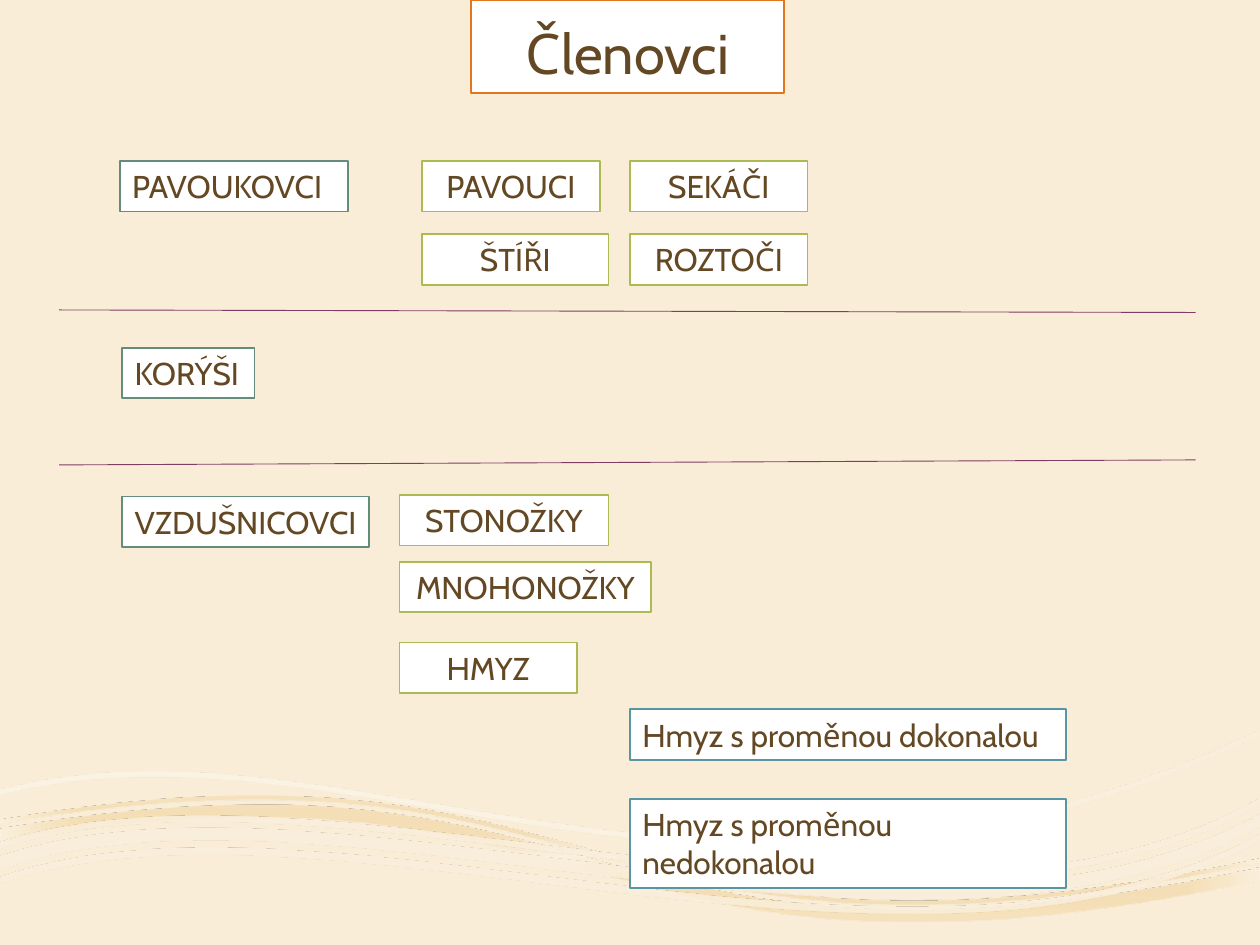
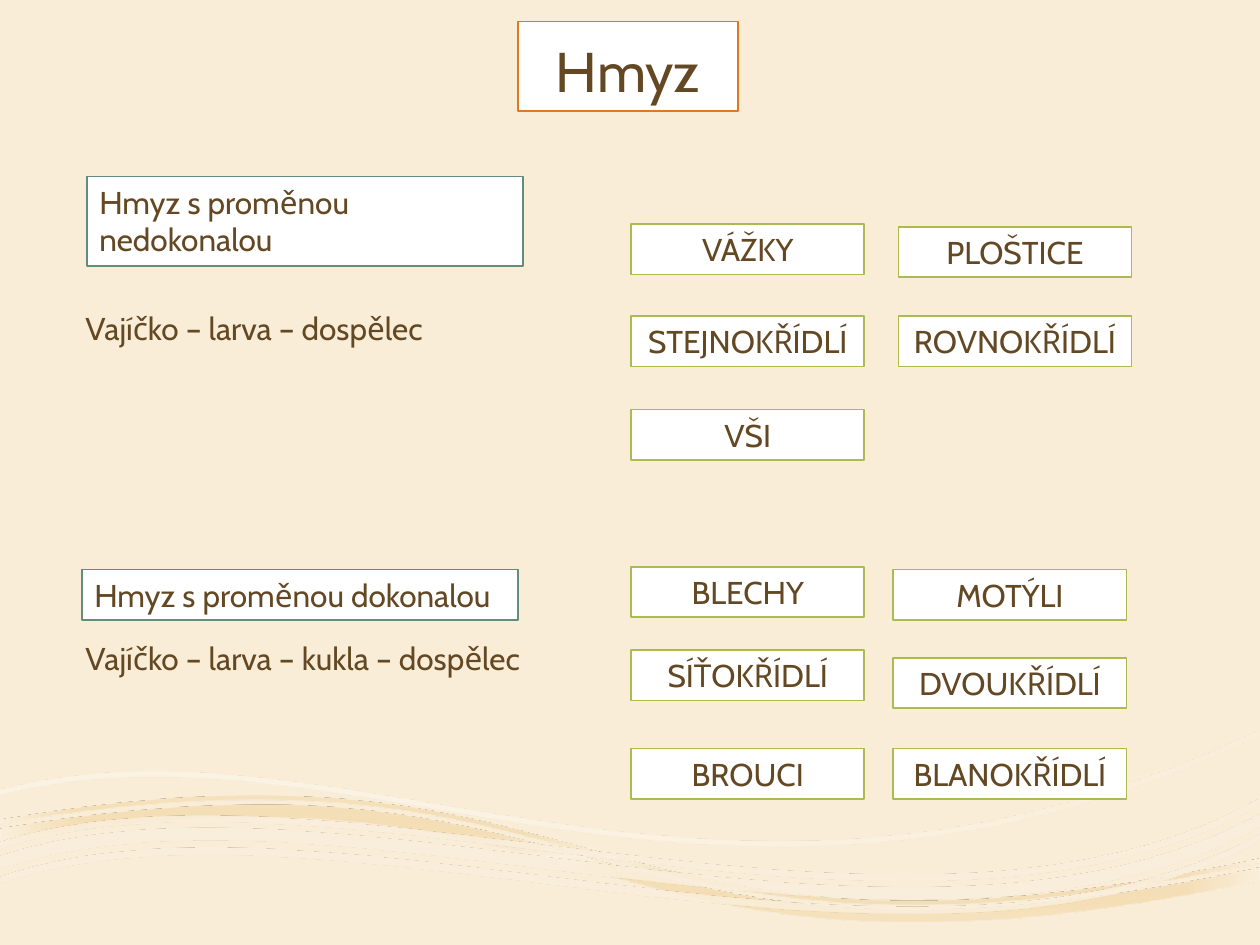
from math import cos, radians, sin

from lxml import etree
from pptx import Presentation
from pptx.dml.color import RGBColor
from pptx.enum.shapes import MSO_CONNECTOR, MSO_SHAPE
from pptx.enum.text import MSO_ANCHOR, MSO_AUTO_SIZE, PP_ALIGN
from pptx.oxml import parse_xml
from pptx.oxml.ns import nsdecls, qn
from pptx.util import Inches, Pt

RECTANGLE = MSO_SHAPE.RECTANGLE
STRAIGHT = MSO_CONNECTOR.STRAIGHT
LEFT, CENTER = PP_ALIGN.LEFT, PP_ALIGN.CENTER
TOP, BOTTOM = MSO_ANCHOR.TOP, MSO_ANCHOR.BOTTOM
GROW, FIXED = MSO_AUTO_SIZE.SHAPE_TO_FIT_TEXT, MSO_AUTO_SIZE.NONE

CREAM = RGBColor(0xF9, 0xED, 0xD7)
WHITE = RGBColor(0xFF, 0xFF, 0xFF)
BROWN = RGBColor(0x63, 0x48, 0x23)
ORANGE = RGBColor(0xE1, 0x77, 0x1F)
TEAL = RGBColor(0x64, 0x8C, 0x7A)
GREEN = RGBColor(0xAC, 0xBB, 0x51)
BLUE = RGBColor(0x5A, 0x95, 0xA4)
PLUM = RGBColor(0x80, 0x3C, 0x63)
PALE_SAND = RGBColor(0xFA, 0xF1, 0xDF)
SAND = RGBColor(0xF4, 0xDE, 0xB7)
DEEP_SAND = RGBColor(0xF4, 0xDD, 0xB3)
LIGHT_CREAM = RGBColor(0xFA, 0xEF, 0xDC)

FONT = "Cabin"
LINE_HEIGHT = 0.4
TWO_LINE_HEIGHT = 0.71
WAVE_TILT = 3.5

COMPLETE = "Hmyz s proměnou dokonalou"
INCOMPLETE = "Hmyz s proměnou nedokonalou"

SLIDES = [
    {
        "title": ("Členovci", 3.74, 0, 2.48, 0.74),
        "boxes": [
            (TEAL, LEFT, [
                ("KORÝŠI", 0.97, 2.76, 1.05),
                ("VZDUŠNICOVCI", 0.97, 3.94, 1.96),
                ("PAVOUKOVCI", 0.95, 1.28, 1.81),
            ]),
            (GREEN, CENTER, [
                ("PAVOUCI", 3.35, 1.28, 1.41),
                ("STONOŽKY", 3.17, 3.93, 1.66),
                ("MNOHONOŽKY", 3.17, 4.46, 2),
                ("HMYZ", 3.17, 5.1, 1.41),
                ("ROZTOČI", 5, 1.86, 1.41),
                ("SEKÁČI", 5, 1.28, 1.41),
                ("ŠTÍŘI", 3.35, 1.86, 1.48),
            ]),
            (BLUE, LEFT, [
                (COMPLETE, 5, 5.63, 3.46),
                (INCOMPLETE, 5, 6.34, 3.46),
            ]),
        ],
        "stages": [],
        "dividers": [(0.47, 2.46, 9.49, 2.48), (0.47, 3.69, 9.49, 3.65)],
    },
    {
        "title": ("Hmyz", 4.11, 0.17, 1.75, 0.71),
        "boxes": [
            (TEAL, LEFT, [
                (COMPLETE, 0.65, 4.52, 3.46),
                (INCOMPLETE, 0.69, 1.4, 3.46),
            ]),
            (GREEN, CENTER, [
                (order, left, top, 1.85)
                for left, orders in [
                    (5.01, [("VÁŽKY", 1.78), ("STEJNOKŘÍDLÍ", 2.51), ("VŠI", 3.25),
                            ("BLECHY", 4.5), ("SÍŤOKŘÍDLÍ", 5.16), ("BROUCI", 5.94)]),
                    (7.13, [("PLOŠTICE", 1.8), ("ROVNOKŘÍDLÍ", 2.51)]),
                    (7.09, [("MOTÝLI", 4.52), ("DVOUKŘÍDLÍ", 5.22), ("BLANOKŘÍDLÍ", 5.94)]),
                ]
                for order, top in orders
            ]),
        ],
        "stages": [
            ("Vajíčko – larva – dospělec", 0.58, 2.4, 3.53),
            ("Vajíčko – larva – kukla – dospělec", 0.58, 5.02, 3.68),
        ],
        "dividers": [],
    },
]

WAVES = [
    {
        "frame": (0.01, 6.12, 9.98, 1.35),
        "contours": [
            [(2.28, 6.39), (5.02, 6.47, 5.55, 7.83, 10, 6.88), (10.01, 6.98),
             (4.54, 8.14, 4.99, 5.83, -0.01, 6.68), (-0.01, 6.58),
             (0.92, 6.42, 1.66, 6.38, 2.28, 6.39)],
            [(2.28, 6.32), (5.02, 6.4, 5.55, 7.76, 10, 6.81), (10, 6.84),
             (4.53, 8.01, 4.99, 5.69, -0.01, 6.54), (-0.01, 6.51),
             (0.92, 6.35, 1.66, 6.3, 2.28, 6.32)],
        ],
        "stops": [(0, PALE_SAND, 90), (18, SAND, 100), (37, DEEP_SAND, 90), (100, PALE_SAND, 100)],
        "direction": '<a:path path="shape"><a:fillToRect l="50000" t="50000" r="50000" b="50000"/></a:path>',
    },
    {
        "frame": (0.02, 5.88, 10.01, 1.71),
        "contours": [
            [(10.06, 7.23), (10.06, 7.23), (10.06, 7.27), (10.06, 7.27)],
            [(9.99, 5.8), (9.99, 5.84), (5.67, 7.89, 2.78, 5.58, -0.01, 6.31), (-0.01, 6.27),
             (2.78, 5.54, 5.67, 7.85, 9.99, 5.8)],
        ],
        "stops": [(36, WHITE, 30), (100, CREAM, 48)],
        "direction": '<a:lin ang="2700000" scaled="0"/>',
    },
    {
        "frame": (0, 6.25, 10.02, 1.15),
        "contours": [
            [(10, 6.62), (10, 6.67), (7.19, 8.2, 2.6, 6.13, 0, 7.01), (0, 6.96),
             (2.6, 6.07, 7.19, 8.14, 10, 6.62)],
            [(10, 6.46), (10, 6.56), (7.19, 8.08, 2.6, 6.01, 0, 6.9), (-0.01, 6.8),
             (2.6, 5.92, 7.18, 7.99, 10, 6.46)],
            [(9.99, 6.34), (10, 6.39), (7.2, 7.95, 2.62, 5.88, -0.01, 6.74), (-0.01, 6.69),
             (2.62, 5.84, 7.2, 7.9, 9.99, 6.34)],
        ],
        "stops": [(36, WHITE, 47), (100, LIGHT_CREAM, 82)],
        "direction": '<a:path path="rect"><a:fillToRect l="100000" t="100000"/></a:path>',
    },
]


def wave_outline(contours, left, top, width, height):
    cosine, sine = cos(radians(WAVE_TILT)), sin(radians(WAVE_TILT))

    def point_xml(x, y):
        across, down = x - left - width / 2, y - top - height / 2
        local_x = Inches(across * cosine - down * sine + width / 2)
        local_y = Inches(across * sine + down * cosine + height / 2)
        return f'<a:pt x="{local_x}" y="{local_y}"/>'

    commands = ""
    for contour in contours:
        for index, segment in enumerate(contour):
            tag = "moveTo" if index == 0 else "lnTo" if len(segment) == 2 else "cubicBezTo"
            points = "".join(point_xml(*pair) for pair in zip(segment[::2], segment[1::2]))
            commands += f"<a:{tag}>{points}</a:{tag}>"
        commands += "<a:close/>"
    return parse_xml(f'<a:pathLst {nsdecls("a")}><a:path w="{Inches(width)}" h="{Inches(height)}">'
                     f'{commands}</a:path></a:pathLst>')


def gradient_fill(stops, direction):
    stop_xml = "".join(
        f'<a:gs pos="{position * 1000}"><a:srgbClr val="{color}">'
        f'<a:alpha val="{opacity * 1000}"/></a:srgbClr></a:gs>'
        for position, color, opacity in stops)
    return parse_xml(f'<a:gradFill {nsdecls("a")} rotWithShape="1">'
                     f'<a:gsLst>{stop_xml}</a:gsLst>{direction}</a:gradFill>')


def place(shape, *bounds):
    shape.left, shape.top, shape.width, shape.height = map(Inches, bounds)


def decorate_layout(layout, slide):
    layout.background.fill.solid()
    layout.background.fill.fore_color.rgb = CREAM
    for index, wave in enumerate(WAVES):
        builder = slide.shapes.build_freeform()
        builder.add_line_segments([(Inches(1), Inches(1))])
        shape = builder.convert_to_shape()
        place(shape, *wave["frame"])
        shape.rotation = -WAVE_TILT
        shape.shadow.inherit = False
        shape.line.fill.background()
        geometry = shape.element.spPr.find(qn("a:custGeom"))
        geometry.replace(geometry.find(qn("a:pathLst")),
                         wave_outline(wave["contours"], *wave["frame"]))
        geometry.addnext(gradient_fill(wave["stops"], wave["direction"]))
        layout.shapes.element.insert(2 + index, shape.element)


def write_text(shape, text, size, alignment, anchor, auto_size):
    frame = shape.text_frame
    frame.text = text
    frame.word_wrap = True
    frame.auto_size = auto_size
    frame.vertical_anchor = anchor
    paragraph = frame.paragraphs[0]
    paragraph.alignment = alignment
    paragraph.font.name = FONT
    paragraph.font.size = Pt(size)
    paragraph.font.color.rgb = BROWN
    return paragraph


def frame_shape(shape, color):
    shape.fill.solid()
    shape.fill.fore_color.rgb = WHITE
    shape.line.color.rgb = color
    shape.line.width = Pt(1)


def set_title(slide, text, *bounds):
    title = slide.shapes.title
    place(title, *bounds)
    frame_shape(title, ORANGE)
    write_text(title, text, 32, CENTER, BOTTOM, FIXED).line_spacing = 0.9


def add_box(slide, color, alignment, text, left, top, width):
    height = TWO_LINE_HEIGHT if text == INCOMPLETE else LINE_HEIGHT
    box = slide.shapes.add_shape(RECTANGLE, *map(Inches, (left, top, width, height)))
    box.shadow.inherit = False
    frame_shape(box, color)
    write_text(box, text, 18, alignment, TOP, GROW)


def add_stages(slide, text, left, top, width):
    stages = slide.shapes.add_textbox(*map(Inches, (left, top, width, LINE_HEIGHT)))
    write_text(stages, text, 18, LEFT, TOP, GROW)


def add_divider(slide, ends):
    divider = slide.shapes.add_connector(STRAIGHT, *map(Inches, ends))
    divider.line.color.rgb = PLUM
    divider.line.width = Pt(0.5)
    etree.SubElement(divider.element.spPr, qn("a:effectLst"))


def main():
    presentation = Presentation()
    presentation.slide_width = Inches(10)
    presentation.slide_height = Inches(7.5)
    layout = presentation.slide_layouts[5]
    for index, content in enumerate(SLIDES):
        slide = presentation.slides.add_slide(layout)
        if index == 0:
            decorate_layout(layout, slide)
        set_title(slide, *content["title"])
        for color, alignment, boxes in content["boxes"]:
            for box in boxes:
                add_box(slide, color, alignment, *box)
        for stages in content["stages"]:
            add_stages(slide, *stages)
        for ends in content["dividers"]:
            add_divider(slide, ends)
    presentation.save("out.pptx")


if __name__ == "__main__":
    main()
